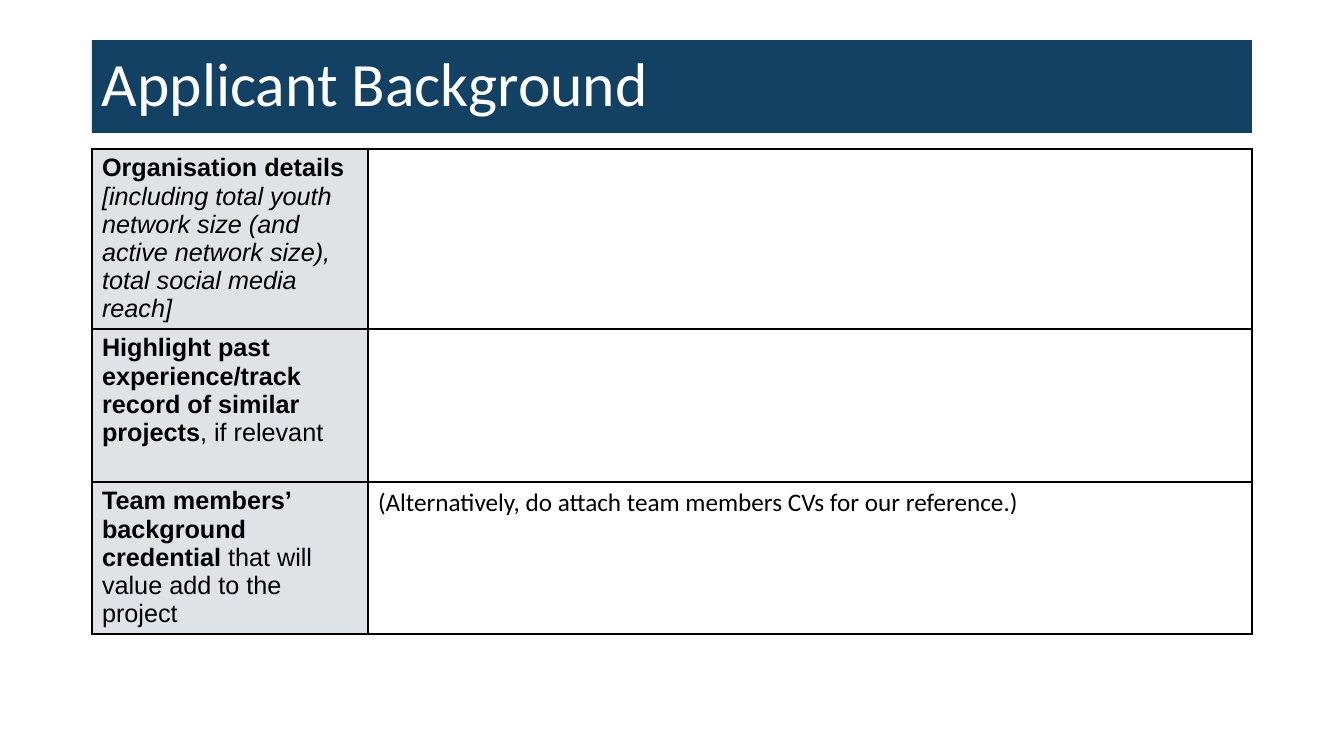
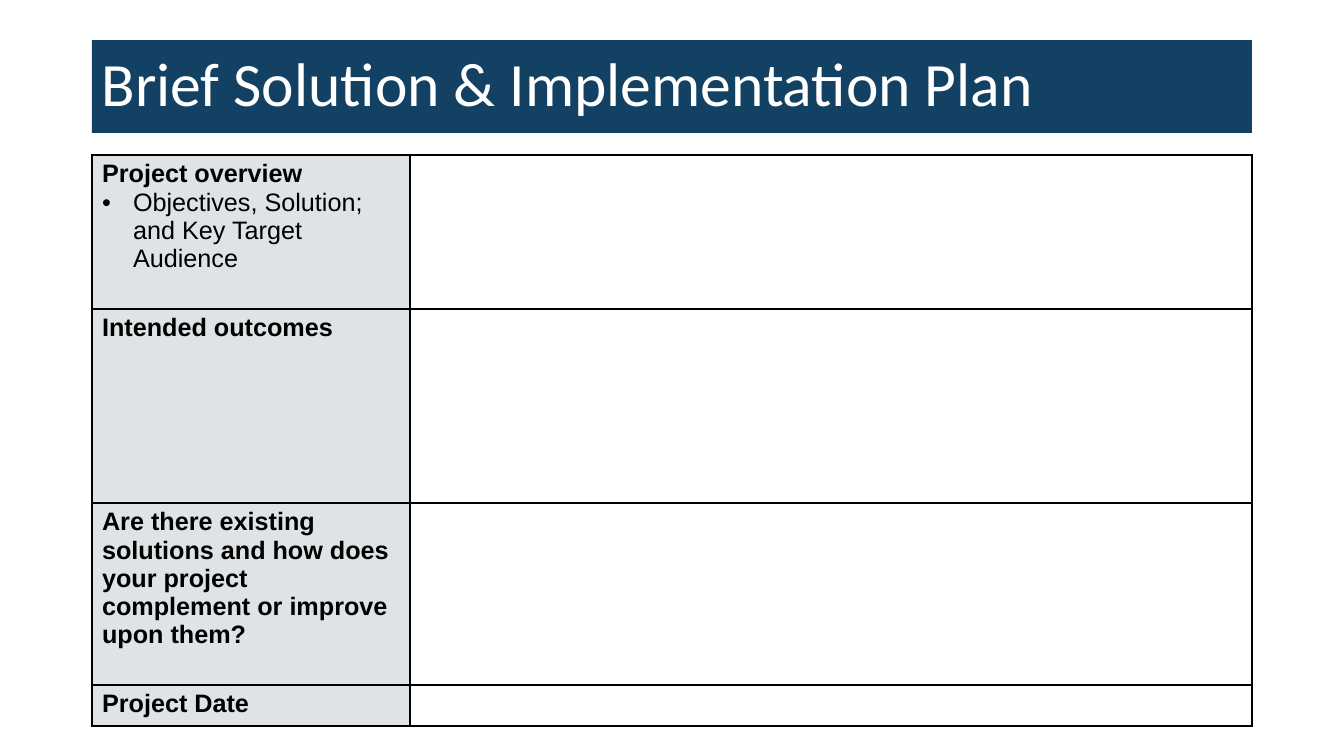
from dataclasses import dataclass

from lxml.etree import SubElement
from pptx import Presentation
from pptx.dml.color import RGBColor as RGB
from pptx.enum.shapes import MSO_SHAPE as SHAPE
from pptx.enum.text import MSO_ANCHOR as ANCHOR, PP_ALIGN as ALIGN
from pptx.oxml import parse_xml
from pptx.oxml.ns import nsdecls, qn
from pptx.util import Emu, Pt


@dataclass(frozen=True)
class Theme:
    band: str = "134163"
    label: str = "DFE3E5"
    ink: str = "000000"
    paper: str = "FFFFFF"
    title_size: int = 44
    body_size: int = 18
    border_size: int = 1
    title_font: str = "Calibri"
    label_font: str = "Arial"


THEME = Theme()
SLIDE_WIDTH, SLIDE_HEIGHT = 1344, 756
EMU_PER_PX = 12192000 / SLIDE_WIDTH
LEFT, CONTENT_WIDTH = 92, 1160
BAND_TOP, BAND_HEIGHT = 40, 93
BULLET_INDENT = 31

BOLD, ITALIC, PLAIN, BREAK = "bold", "italic", "plain", "break"

SLIDES = [
    {
        "title": "Applicant Background",
        "top": 149,
        "label_width": 276,
        "rows": [
            {
                "height": 180,
                "label": [[
                    ("Organisation details", BOLD),
                    ("", BREAK),
                    ("[including total youth network size (and active network size), "
                     "total social media reach]", ITALIC),
                ]],
            },
            {
                "height": 153,
                "label": [[
                    ("Highlight past experience/track record of similar projects", BOLD),
                    (", if relevant", PLAIN),
                ]],
            },
            {
                "height": 152,
                "label": [[
                    ("Team members’ background credential ", BOLD),
                    ("that will value add to the project", PLAIN),
                ]],
                "answer": "(Alternatively, do attach team members CVs for our reference.)",
            },
        ],
    },
    {
        "title": "Brief Solution & Implementation Plan",
        "top": 155,
        "label_width": 318,
        "rows": [
            {
                "height": 154,
                "label": [[("Project overview", BOLD)]],
                "bullets": ["Objectives, Solution; and Key Target Audience"],
            },
            {"height": 194, "label": [[("Intended outcomes", BOLD)]]},
            {
                "height": 182,
                "label": [[
                    ("Are there existing solutions and how does your project "
                     "complement or improve upon them?", BOLD),
                ]],
            },
            {"height": 41, "label": [[("Project Date", BOLD)]]},
        ],
    },
]


def px(length):
    return Emu(round(length * EMU_PER_PX))


def add_run(paragraph, text, font, size, color, style=PLAIN):
    run = paragraph.add_run()
    run.text = text
    run.font.name = font
    run.font.size = Pt(size)
    run.font.color.rgb = RGB.from_string(color)
    run.font.bold = style == BOLD
    run.font.italic = style == ITALIC


def add_title(slide, text):
    band = slide.shapes.add_shape(
        SHAPE.RECTANGLE, px(LEFT), px(BAND_TOP), px(CONTENT_WIDTH), px(BAND_HEIGHT))
    band.shadow.inherit = False
    band.fill.solid()
    band.fill.fore_color.rgb = RGB.from_string(THEME.band)
    band.line.fill.background()
    band.text_frame.word_wrap = True
    band.text_frame.vertical_anchor = ANCHOR.MIDDLE
    paragraph = band.text_frame.paragraphs[0]
    paragraph.alignment = ALIGN.LEFT
    paragraph.line_spacing = 0.9
    add_run(paragraph, text, THEME.title_font, THEME.title_size, THEME.paper)


def set_borders(cell):
    properties = cell._tc.get_or_add_tcPr()
    for index, side in enumerate(("lnL", "lnR", "lnT", "lnB")):
        properties.insert(index, parse_xml(
            f'<a:{side} {nsdecls("a")} w="{Pt(THEME.border_size)}"><a:solidFill>'
            f'<a:srgbClr val="{THEME.ink}"/></a:solidFill></a:{side}>'))


def set_bullet(paragraph):
    properties = paragraph._p.get_or_add_pPr()
    indent = px(BULLET_INDENT)
    properties.set("marL", str(indent))
    properties.set("indent", str(-indent))
    SubElement(properties, qn("a:buFont")).set("typeface", THEME.label_font)
    SubElement(properties, qn("a:buChar")).set("char", "•")


def fill_label(cell, row):
    cell.fill.solid()
    cell.fill.fore_color.rgb = RGB.from_string(THEME.label)
    frame = cell.text_frame
    bullets = [[(text, PLAIN)] for text in row.get("bullets", [])]
    for index, runs in enumerate(row["label"] + bullets):
        paragraph = frame.add_paragraph() if index else frame.paragraphs[0]
        if index >= len(row["label"]):
            set_bullet(paragraph)
        for text, style in runs:
            if style == BREAK:
                paragraph.add_line_break()
            else:
                add_run(paragraph, text, THEME.label_font, THEME.body_size, THEME.ink, style)


def fill_answer(cell, row):
    cell.fill.background()
    if "answer" in row:
        add_run(cell.text_frame.paragraphs[0], row["answer"],
                THEME.title_font, THEME.body_size, THEME.ink)


def add_form(slide, content):
    rows = content["rows"]
    table = slide.shapes.add_table(
        len(rows), 2, px(LEFT), px(content["top"]), px(CONTENT_WIDTH),
        px(sum(row["height"] for row in rows))).table
    table.first_row = False
    table.horz_banding = False
    table.columns[0].width = px(content["label_width"])
    table.columns[1].width = px(CONTENT_WIDTH - content["label_width"])
    for index, row in enumerate(rows):
        table.rows[index].height = px(row["height"])
        fill_label(table.cell(index, 0), row)
        fill_answer(table.cell(index, 1), row)
        for column in range(2):
            set_borders(table.cell(index, column))


def main():
    presentation = Presentation()
    presentation.slide_width = px(SLIDE_WIDTH)
    presentation.slide_height = px(SLIDE_HEIGHT)
    for content in SLIDES:
        slide = presentation.slides.add_slide(presentation.slide_layouts[6])
        add_title(slide, content["title"])
        add_form(slide, content)
    presentation.save("out.pptx")


if __name__ == "__main__":
    main()
